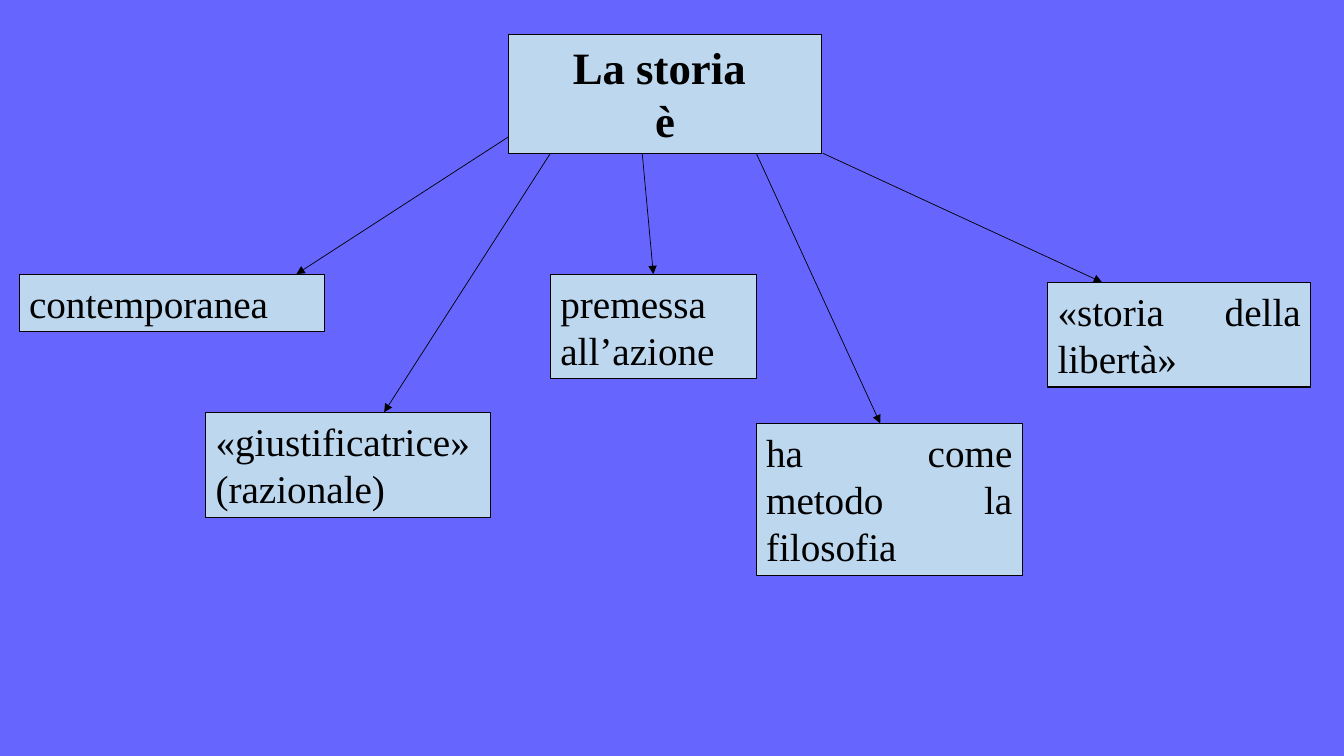
import pptx
import pptx.util
import pptx.dml.color
import pptx.enum.dml
import pptx.enum.shapes
import pptx.enum.text
import pptx.oxml
import pptx.oxml.ns

Inches = pptx.util.Inches
Pt = pptx.util.Pt
ALIGN = pptx.enum.text.PP_ALIGN

COLOURS = {"background": "6666FF", "box": "BDD7EE", "ink": "000000"}
TITLE_FONT = {"name": "Times New Roman", "size": Pt(32), "bold": True}
BODY_FONT = {"name": "Times New Roman", "size": Pt(28), "bold": False}
FRAME_FORMAT = {
    "word_wrap": True,
    "auto_size": pptx.enum.text.MSO_AUTO_SIZE.SHAPE_TO_FIT_TEXT,
    "vertical_anchor": pptx.enum.text.MSO_ANCHOR.TOP,
}

TITLE = ((5.04, 0.34, 3.11, 1.18), ["La storia ", "è"])
CONCEPTS = [
    ((0.19, 2.72, 3.03, 0.57), "contemporanea", ALIGN.LEFT),
    ((2.04, 4.09, 2.83, 1.04), "«giustificatrice» (razionale)", ALIGN.LEFT),
    ((5.46, 2.72, 2.04, 1.04), "premessa all’azione", ALIGN.LEFT),
    ((10.39, 2.8, 2.61, 1.04), "«storia della libertà»", ALIGN.JUSTIFY),
    ((7.5, 4.2, 2.64, 1.51), "ha come metodo la filosofia", ALIGN.JUSTIFY),
]
ARROWS = [
    ((5.04, 1.36), (2.94, 2.72)),
    ((5.46, 1.52), (3.81, 4.09)),
    ((6.37, 1.52), (6.48, 2.72)),
    ((7.5, 1.52), (8.73, 4.2)),
    ((8.16, 1.52), (10.93, 2.8)),
]


def colour(name):
    return pptx.dml.color.RGBColor.from_string(COLOURS[name])


def apply_format(target, values):
    for name, value in values.items():
        setattr(target, name, value)


def paint(fill, name):
    fill.solid()
    fill.fore_color.rgb = colour(name)


def draw_line(line, width):
    paint(line.fill, "ink")
    line.width = Pt(width)


def add_box(page, place, lines, align, font):
    box = page.shapes.add_shape(
        pptx.enum.shapes.MSO_SHAPE.RECTANGLE, *map(Inches, place))
    box.shadow.inherit = False
    paint(box.fill, "box")
    draw_line(box.line, 0.75)
    frame = box.text_frame
    apply_format(frame, FRAME_FORMAT)
    for index, text in enumerate(lines):
        para = frame.add_paragraph() if index else frame.paragraphs[0]
        para.alignment = align
        span = para.add_run()
        span.text = text
        apply_format(span.font, font)
        span.font.color.rgb = colour("ink")


def add_arrow(page, start, end):
    arrow = page.shapes.add_connector(
        pptx.enum.shapes.MSO_CONNECTOR.STRAIGHT, *map(Inches, start + end))
    draw_line(arrow.line, 0.5)
    properties = arrow._element.spPr
    head = pptx.oxml.parse_xml(
        f'<a:tailEnd {pptx.oxml.ns.nsdecls("a")} type="triangle"/>')
    arrow.line._get_or_add_ln().append(head)
    properties.append(pptx.oxml.parse_xml(
        f'<a:effectLst {pptx.oxml.ns.nsdecls("a")}/>'))


def main():
    deck = pptx.Presentation()
    deck.slide_width = Inches(13.33)
    deck.slide_height = Inches(7.5)
    page = deck.slides.add_slide(deck.slide_layouts[6])
    paint(page.background.fill, "background")
    place, lines = TITLE
    add_box(page, place, lines, ALIGN.CENTER, TITLE_FONT)
    for place, text, align in CONCEPTS:
        add_box(page, place, [text], align, BODY_FONT)
    for start, end in ARROWS:
        add_arrow(page, start, end)
    deck.save("out.pptx")


if __name__ == "__main__":
    main()
